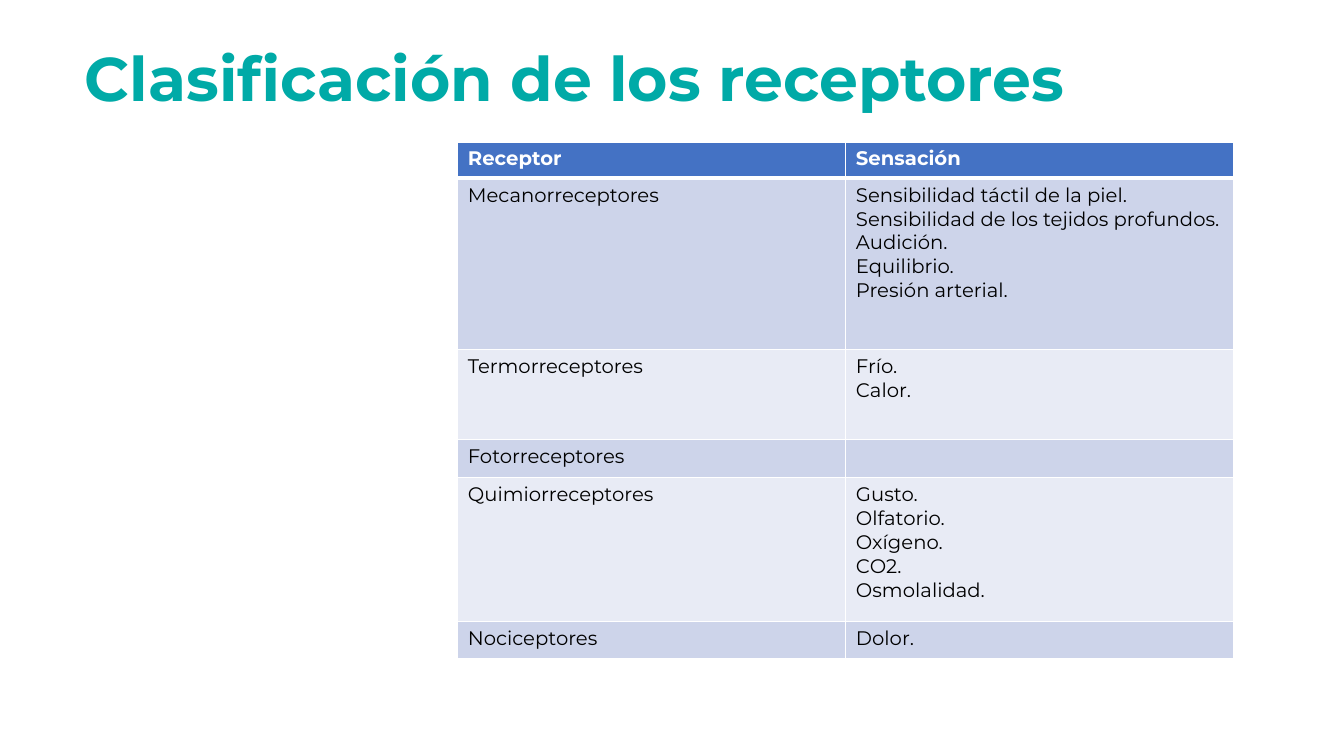
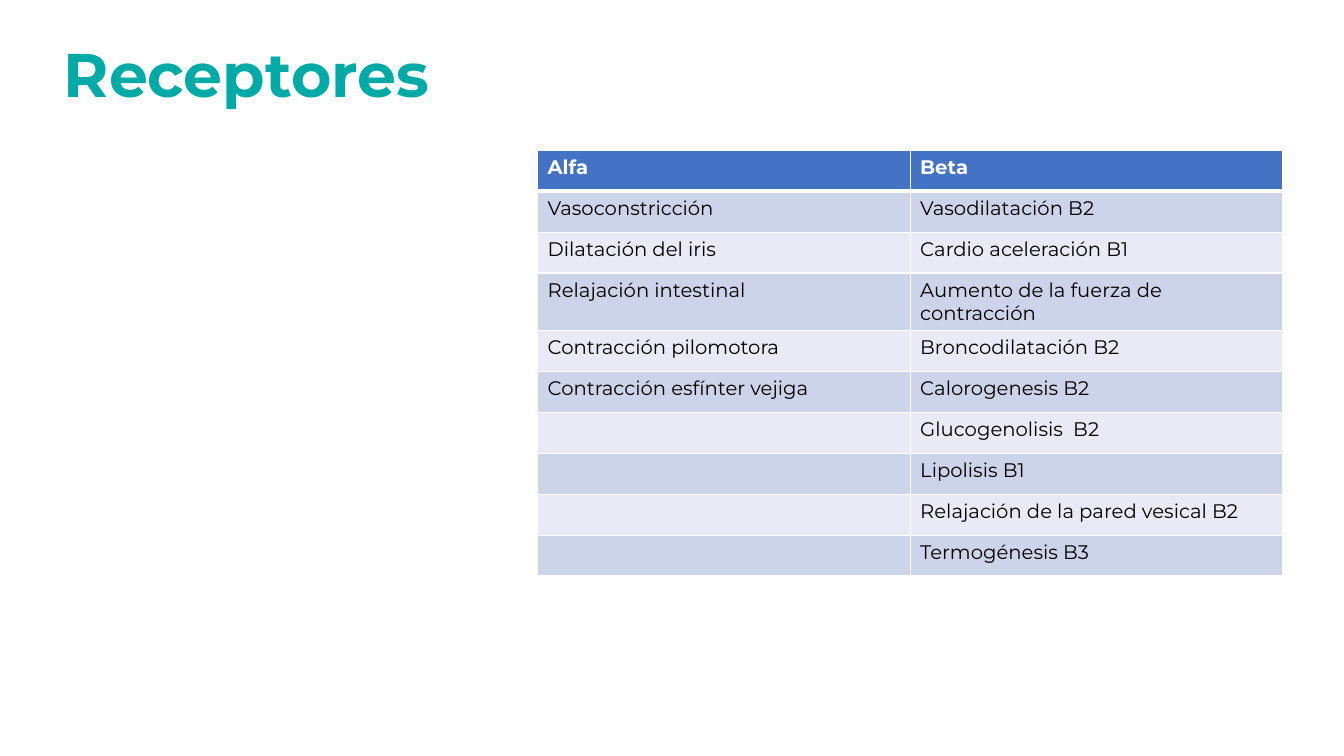
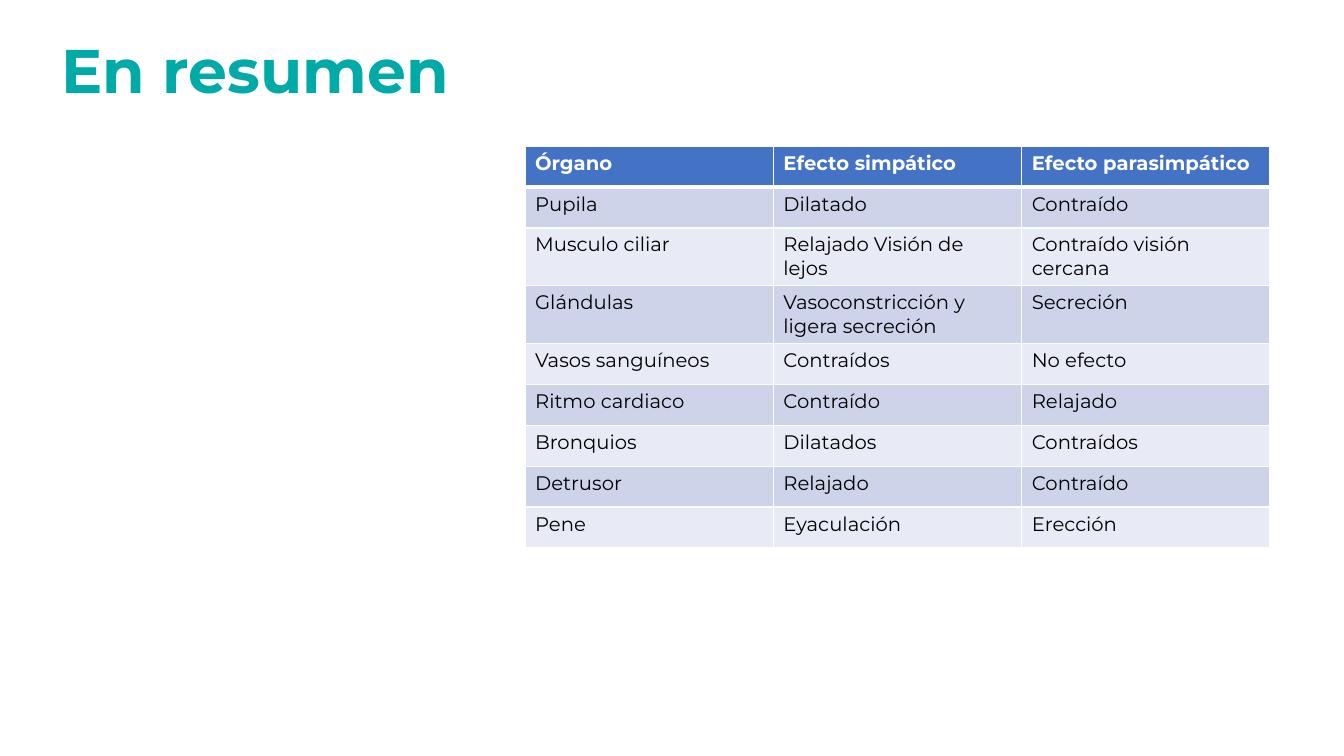
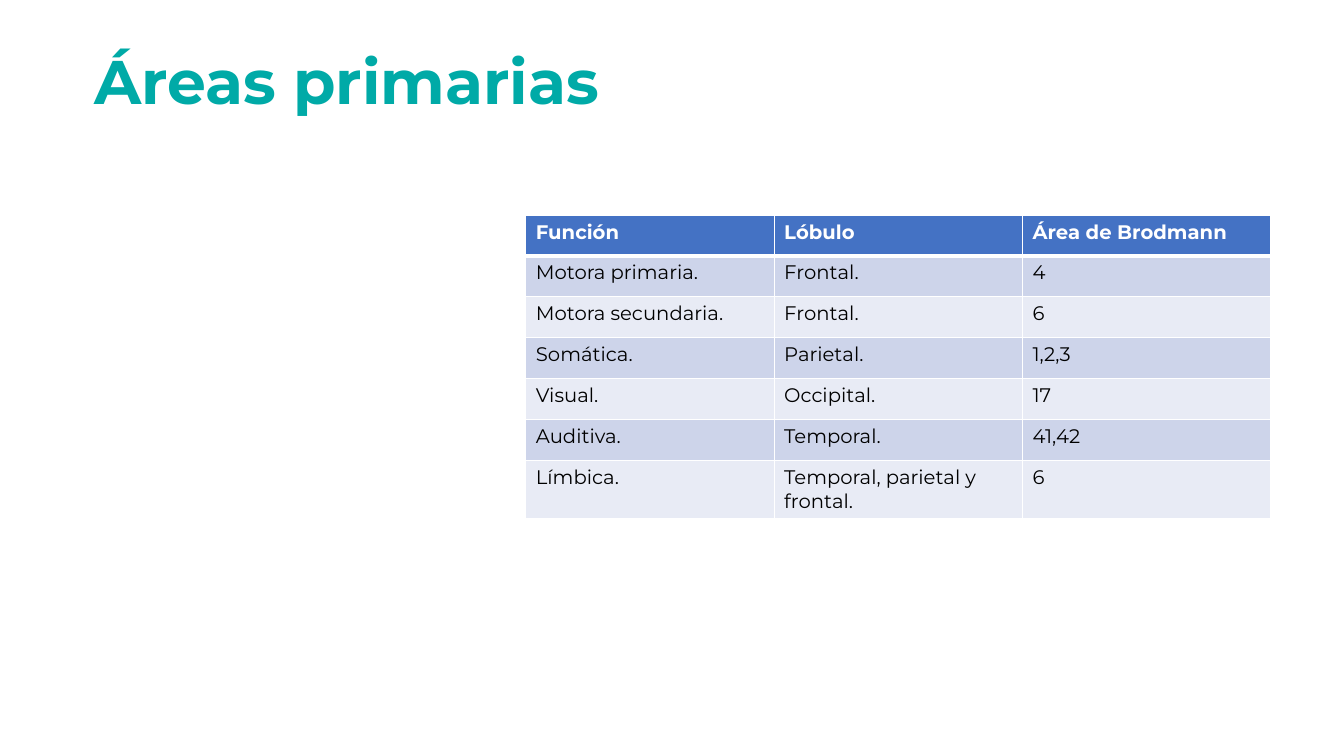
from lxml import etree
from pptx import Presentation, util as u
from pptx.dml.color import RGBColor
from pptx.enum import text
from pptx.oxml import ns

HUES = {"title": "00AAA7", "head": "4472C4", "odd": "CDD4EA",
        "even": "E8EBF5", "ink": "000000", "white": "FFFFFF"}
FONTS = {
    "title": {"name": "Montserrat", "size": u.Pt(44), "bold": True},
    "head": {"name": "Montserrat", "size": u.Pt(14), "bold": True},
    "body": {"name": "Montserrat", "size": u.Pt(14), "bold": False},
}
COLS, ROWS = 160, 90


class Deck:
    """Holds the style and the current slide; lengths are grid cells."""

    def __init__(self):
        self.prs = Presentation()
        self.prs.slide_width = u.Inches(40 / 3)
        self.prs.slide_height = u.Inches(7.5)
        self.slide = None

    def x(self, cols):
        return round(self.prs.slide_width * cols / COLS)

    def y(self, rows):
        return round(self.prs.slide_height * rows / ROWS)

    def style(self, font, kind, hue):
        for key, val in FONTS[kind].items():
            setattr(font, key, val)
        font.color.rgb = RGBColor.from_string(HUES[hue])

    # New slide with its title
    def title(self, words, left, top):
        self.slide = self.prs.slides.add_slide(self.prs.slide_layouts[5])
        box = self.slide.shapes.title
        box.left, box.top = self.x(left), self.y(top)
        box.width, box.height = self.x(138), self.y(17.4)
        frame = box.text_frame
        frame.text = words
        frame.auto_size = text.MSO_AUTO_SIZE.NONE
        frame.vertical_anchor = text.MSO_ANCHOR.MIDDLE
        para = frame.paragraphs[0]
        para.alignment = text.PP_ALIGN.LEFT
        para.line_spacing = 0.9
        self.style(para.runs[0].font, "title", "title")

    # White cell borders, thicker under the header
    def edge(self, cell, row):
        props = cell._tc.get_or_add_tcPr()
        for i, side in enumerate("LRTB"):
            thick = (row, side) in ((0, "B"), (1, "T"))
            line = etree.Element(ns.qn("a:ln" + side),
                                 w=str(u.Pt(3 if thick else 1)))
            fill = etree.SubElement(line, ns.qn("a:solidFill"))
            etree.SubElement(fill, ns.qn("a:srgbClr"), val=HUES["white"])
            props.insert(i, line)

    # One cell, a paragraph for each line
    def cell(self, cell, words, row):
        head = row == 0
        hue = "head" if head else "odd" if row % 2 else "even"
        cell.fill.solid()
        cell.fill.fore_color.rgb = RGBColor.from_string(HUES[hue])
        self.edge(cell, row)
        frame = cell.text_frame
        for i, line in enumerate(words.split("\n")):
            para = frame.add_paragraph() if i else frame.paragraphs[0]
            run = para.add_run()
            run.text = line
            self.style(run.font, "head" if head else "body",
                       "white" if head else "ink")

    # Table with equal columns
    def table(self, data, left, top, width=88.7, highs=None):
        highs = highs or [4.87] * len(data)
        count = len(data[0])
        grid = self.slide.shapes.add_table(
            len(data), count, self.x(left), self.y(top),
            self.x(width), self.y(sum(highs))).table
        for col in grid.columns:
            col.width = self.x(width / count)
        for r, (cells, high) in enumerate(zip(data, highs)):
            grid.rows[r].height = self.y(high)
            for c, words in enumerate(cells):
                self.cell(grid.cell(r, c), words, r)


def main():
    deck = Deck()

    # Receptor classes
    deck.title("Clasificación de los receptores", 8.9, 1)
    deck.table([
        ("Receptor", "Sensación"),
        ("Mecanorreceptores",
         "Sensibilidad táctil de la piel.\n"
         "Sensibilidad de los tejidos profundos.\n"
         "Audición.\nEquilibrio.\nPresión arterial."),
        ("Termorreceptores", "Frío.\nCalor."),
        ("Fotorreceptores", ""),
        ("Quimiorreceptores",
         "Gusto.\nOlfatorio.\nOxígeno.\nCO2.\nOsmolalidad."),
        ("Nociceptores", "Dolor."),
    ], 54.5, 16.9, 92.4, [4.32, 20.4, 10.7, 4.32, 17.15, 4.32])

    # Alpha and beta receptors
    deck.title("Receptores", 6.4, 0.5)
    deck.table([
        ("Alfa", "Beta"),
        ("Vasoconstricción", "Vasodilatación B2"),
        ("Dilatación del iris", "Cardio aceleración B1"),
        ("Relajación intestinal", "Aumento de la fuerza de contracción"),
        ("Contracción pilomotora", "Broncodilatación B2"),
        ("Contracción esfínter vejiga", "Calorogenesis B2"),
        ("", "Glucogenolisis  B2"),
        ("", "Lipolisis B1"),
        ("", "Relajación de la pared vesical B2"),
        ("", "Termogénesis B3"),
    ], 64, 17.9)

    # Summary by organ
    deck.title("En resumen", 6.1, 0)
    deck.table([
        ("Órgano", "Efecto simpático", "Efecto parasimpático"),
        ("Pupila", "Dilatado", "Contraído"),
        ("Musculo ciliar", "Relajado Visión de lejos",
         "Contraído visión cercana"),
        ("Glándulas", "Vasoconstricción y ligera secreción", "Secreción"),
        ("Vasos sanguíneos", "Contraídos", "No efecto"),
        ("Ritmo cardiaco", "Contraído", "Relajado"),
        ("Bronquios", "Dilatados", "Contraídos"),
        ("Detrusor", "Relajado", "Contraído"),
        ("Pene", "Eyaculación", "Erección"),
    ], 62.5, 17.4)

    # Primary areas
    deck.title("Áreas primarias", 10, 1.4)
    deck.table([
        ("Función", "Lóbulo", "Área de Brodmann"),
        ("Motora primaria.", "Frontal.", "4"),
        ("Motora secundaria.", "Frontal.", "6"),
        ("Somática.", "Parietal.", "1,2,3"),
        ("Visual.", "Occipital.", "17"),
        ("Auditiva.", "Temporal.", "41,42"),
        ("Límbica.", "Temporal, parietal y frontal.", "6"),
    ], 62.6, 25.6)

    deck.prs.save("out.pptx")


if __name__ == "__main__":
    main()
